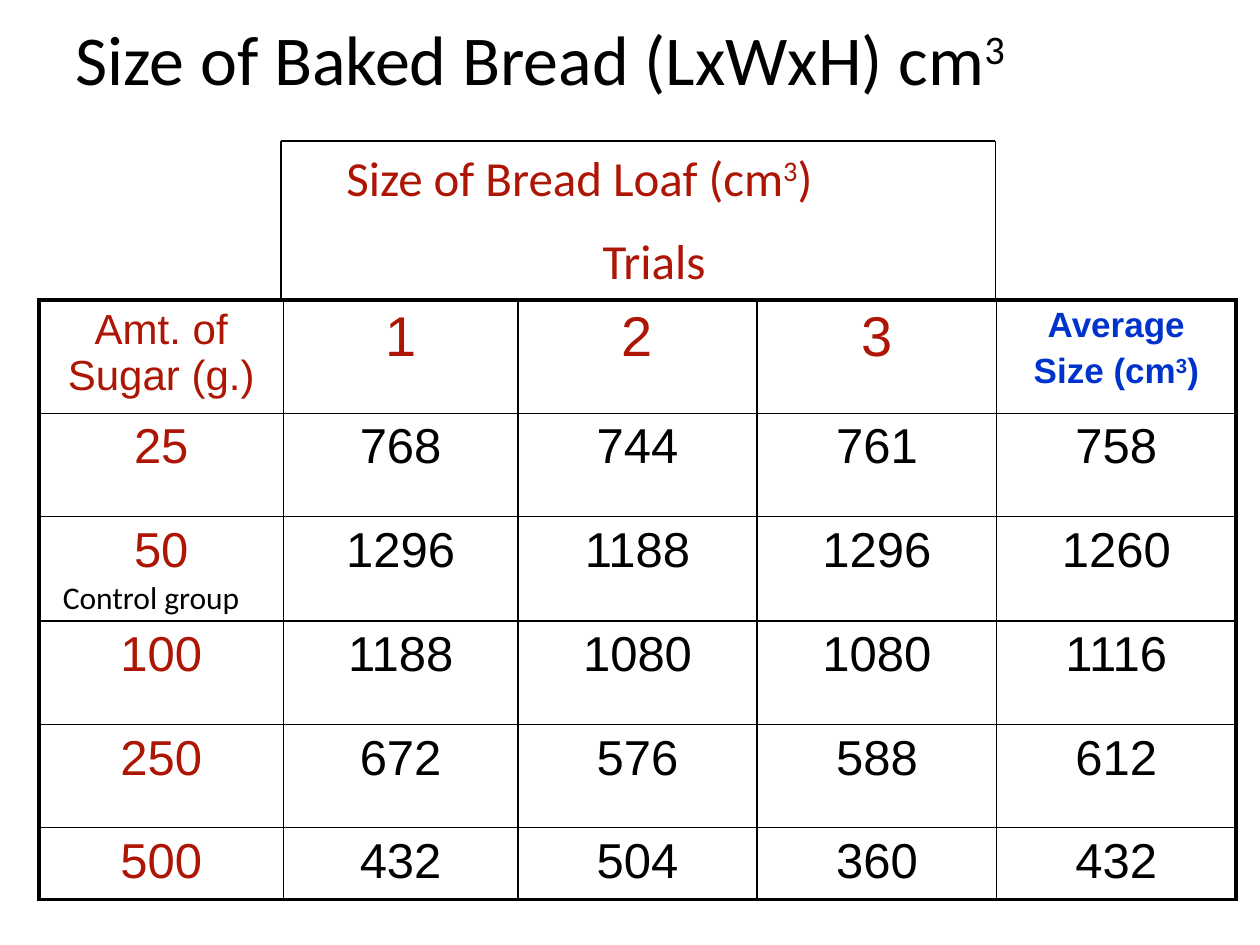
"""Build the slide that tabulates baked bread size by amount of sugar."""
import pptx
import pptx.dml.color
import pptx.enum.shapes
import pptx.enum.text
import pptx.oxml
import pptx.oxml.ns
import pptx.util

Inches, Pt = pptx.util.Inches, pptx.util.Pt
ANCHOR, ALIGN = pptx.enum.text.MSO_ANCHOR, pptx.enum.text.PP_ALIGN

COLORS = {"black": "000000", "red": "AD1505", "blue": "0033CC"}
TITLE = [("Size of Baked Bread (LxWxH) cm", "3")]
LOAF = [("Size of Bread Loaf (cm", "3", ")")]
TRIALS = [("Trials",)]
CONTROL = [("Control group",)]
HEADER = [
    ([("Amt. of Sugar (g.)",)], {"size": 24, "color": "red"}),
    ([("1",)], {"size": 32, "color": "red"}),
    ([("2",)], {"size": 32, "color": "red"}),
    ([("3",)], {"size": 32, "color": "red"}),
    ([("Average",), ("Size (cm", "3", ")")], {"size": 20, "color": "blue", "bold": True}),
]
SIZES = [
    (25, 768, 744, 761, 758),
    (50, 1296, 1188, 1296, 1260),
    (100, 1188, 1080, 1080, 1116),
    (250, 672, 576, 588, 612),
    (500, 432, 504, 360, 432),
]
TABLE_LEFT, TABLE_TOP = 0.31, 2.38
COL_WIDTHS = [1.94, 1.86, 1.9, 1.9, 1.9]
ROW_HEIGHTS = [0.88, 0.82, 0.83, 0.82, 0.82, 0.53]
BRACKET = [(2.23, 2.38), (2.23, 1.12), (7.9, 1.12), (7.9, 2.38)]
THIN, THICK = 1, 2.25


def write(tf, paragraphs, size=28, color="black", font="Arial", bold=False,
          align=ALIGN.LEFT, before=0, line=None, more=False):
    """Write paragraphs given as tuples whose second part is superscript."""
    for i, parts in enumerate(paragraphs):
        p = tf.add_paragraph() if i or more else tf.paragraphs[0]
        p.alignment = align
        if line:
            p.line_spacing = line
        if before:
            p.space_before = Pt(0)
            spacing = p._p.pPr.find(pptx.oxml.ns.qn("a:spcBef"))
            spacing.remove(spacing[0])
            spacing.append(element("spcPct", f'val="{before * 1000}"'))
        for j, part in enumerate(parts):
            r = p.add_run()
            r.text = part
            r.font.size, r.font.name, r.font.bold = Pt(size), font, bold
            r.font.color.rgb = pptx.dml.color.RGBColor.from_string(COLORS[color])
            if j == 1:
                r._r.get_or_add_rPr().set("baseline", "30000")


def element(tag, attributes="", inner=""):
    """Make one drawing element."""
    return pptx.oxml.parse_xml(
        f'<a:{tag} {pptx.oxml.ns.nsdecls("a")} {attributes}>{inner}</a:{tag}>')


def add_text(slide, left, top, width, height, anchor=ANCHOR.TOP):
    """Add a wrapping text box and return its text frame."""
    tf = slide.shapes.add_textbox(*map(Inches, (left, top, width, height))).text_frame
    tf.word_wrap, tf.vertical_anchor = True, anchor
    return tf


def set_borders(cell, **widths):
    """Draw the four cell borders at the given point widths."""
    fill = f'<a:solidFill><a:srgbClr val="{COLORS["black"]}"/></a:solidFill>'
    for side in "LRTB":
        cell._tc.get_or_add_tcPr().append(
            element(f"ln{side}", f'w="{int(Pt(widths[side]))}"', fill))


def add_table(slide):
    """Add the table of loaf sizes."""
    rows = [HEADER] + [
        [([(str(v),)], {"color": "black" if c else "red"}) for c, v in enumerate(row)]
        for row in SIZES]
    last_row, last_col = len(rows) - 1, len(HEADER) - 1
    table = slide.shapes.add_table(
        len(rows), len(HEADER), Inches(TABLE_LEFT), Inches(TABLE_TOP),
        Inches(sum(COL_WIDTHS)), Inches(sum(ROW_HEIGHTS))).table
    table.first_row = table.horz_banding = False
    for column, width in zip(table.columns, COL_WIDTHS):
        column.width = Inches(width)
    for row, height in zip(table.rows, ROW_HEIGHTS):
        row.height = Inches(height)
    for y, row in enumerate(rows):
        for x, (paragraphs, style) in enumerate(row):
            cell = table.cell(y, x)
            write(cell.text_frame, paragraphs, align=ALIGN.CENTER, before=20, **style)
            set_borders(cell, L=THIN if x else THICK, T=THIN if y else THICK,
                        R=THICK if x == last_col else THIN,
                        B=THICK if y == last_row else THIN)
            cell.fill.background()


def add_bracket(slide):
    """Join the bracket corners above the trial columns."""
    for start, end in zip(BRACKET, BRACKET[1:]):
        sp = slide.shapes.add_connector(
            pptx.enum.shapes.MSO_CONNECTOR.STRAIGHT, *map(Inches, start + end))
        sp.line.width = Pt(0.75)
        sp.line.color.rgb = pptx.dml.color.RGBColor.from_string(COLORS["black"])
        sp._element.spPr.append(element("effectLst"))


def main():
    prs = pptx.Presentation()
    prs.slide_width, prs.slide_height = Inches(10), Inches(7.5)
    s = prs.slides.add_slide(prs.slide_layouts[6])
    write(add_text(s, 0.5, 0, 9, 1, ANCHOR.MIDDLE), TITLE, size=40, font="Calibri", line=0.9)
    add_table(s)
    add_bracket(s)
    tf = add_text(s, 2.65, 1.12, 5.08, 1.27)
    write(tf, LOAF, color="red", font="Calibri", before=50)
    write(tf, TRIALS, color="red", font="Calibri", before=50, align=ALIGN.CENTER, more=True)
    write(add_text(s, 0.4, 4.54, 1.83, 0.4), CONTROL, size=18, font="Calibri", before=50)
    prs.save("out.pptx")


if __name__ == "__main__":
    main()
